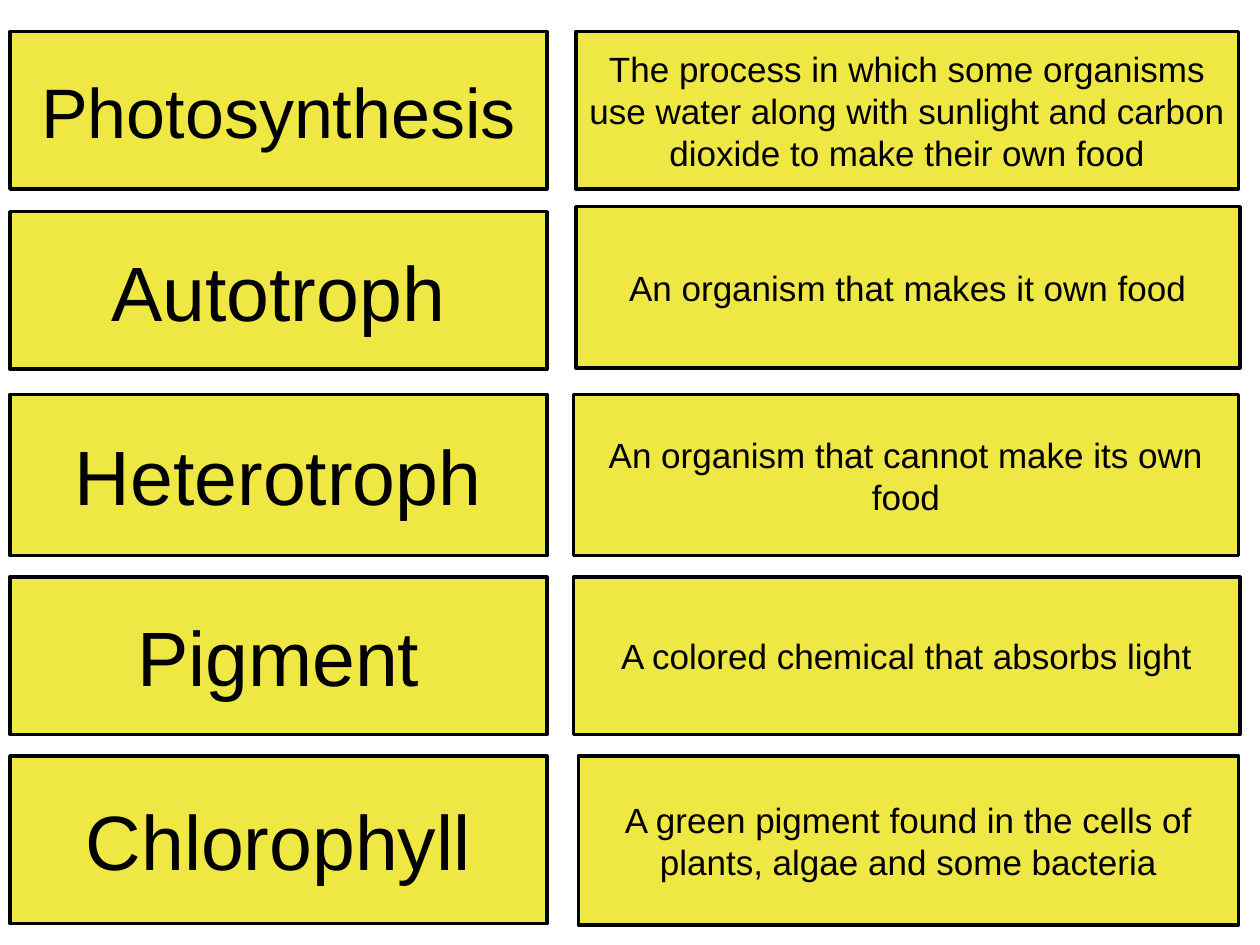
from pptx import Presentation
from pptx.dml.color import RGBColor
from pptx.enum.shapes import MSO_SHAPE
from pptx.enum.text import MSO_ANCHOR, PP_ALIGN
from pptx.util import Inches, Pt

PROCESS = MSO_SHAPE.FLOWCHART_PROCESS
MIDDLE = MSO_ANCHOR.MIDDLE
CENTER = PP_ALIGN.CENTER

COLORS = {"card": "EFE743", "ink": "000000"}
FONT = "Arial"
TERM_LEFT, TERM_WIDTH = 0.08, 4.26
DEFINITION_SIZE = 20

# term, term size, (top, height), definition, definition box (left, top, width, height)
VOCABULARY = [
    ("Photosynthesis", 40, (0.25, 1.25),
     "The process in which some organisms use water along with sunlight "
     "and carbon dioxide to make their own food", (4.57, 0.25, 5.26, 1.25)),
    ("Autotroph", 44, (1.68, 1.25),
     "An organism that makes it own food", (4.57, 1.64, 5.27, 1.28)),
    ("Heterotroph", 44, (3.13, 1.28),
     "An organism that cannot make its own food", (4.55, 3.13, 5.28, 1.28)),
    ("Pigment", 44, (4.58, 1.25),
     "A colored chemical that absorbs light", (4.55, 4.58, 5.29, 1.25)),
    ("Chlorophyll", 44, (6, 1.33),
     "A green pigment found in the cells of plants, algae and some bacteria",
     (4.59, 6, 5.24, 1.34)),
]


def color(name):
    return RGBColor.from_string(COLORS[name])


def add_card(page, box, text, size):
    card = page.shapes.add_shape(PROCESS, *(Inches(length) for length in box))
    card.shadow.inherit = False
    card.fill.solid()
    card.fill.fore_color.rgb = color("card")
    card.line.color.rgb = color("ink")
    card.line.width = Pt(2)

    frame = card.text_frame
    frame.word_wrap = True
    frame.vertical_anchor = MIDDLE
    para = frame.paragraphs[0]
    para.text = text
    para.alignment = CENTER
    para.font.name = FONT
    para.font.size = Pt(size)
    para.font.color.rgb = color("ink")


def add_vocabulary(page):
    for term, term_size, (top, height), definition, definition_box in VOCABULARY:
        add_card(page, (TERM_LEFT, top, TERM_WIDTH, height), term, term_size)
        add_card(page, definition_box, definition, DEFINITION_SIZE)


def main():
    deck = Presentation()
    deck.slide_width = Inches(10)
    deck.slide_height = Inches(7.5)
    page = deck.slides.add_slide(deck.slide_layouts[6])
    add_vocabulary(page)
    deck.save("out.pptx")


if __name__ == "__main__":
    main()
